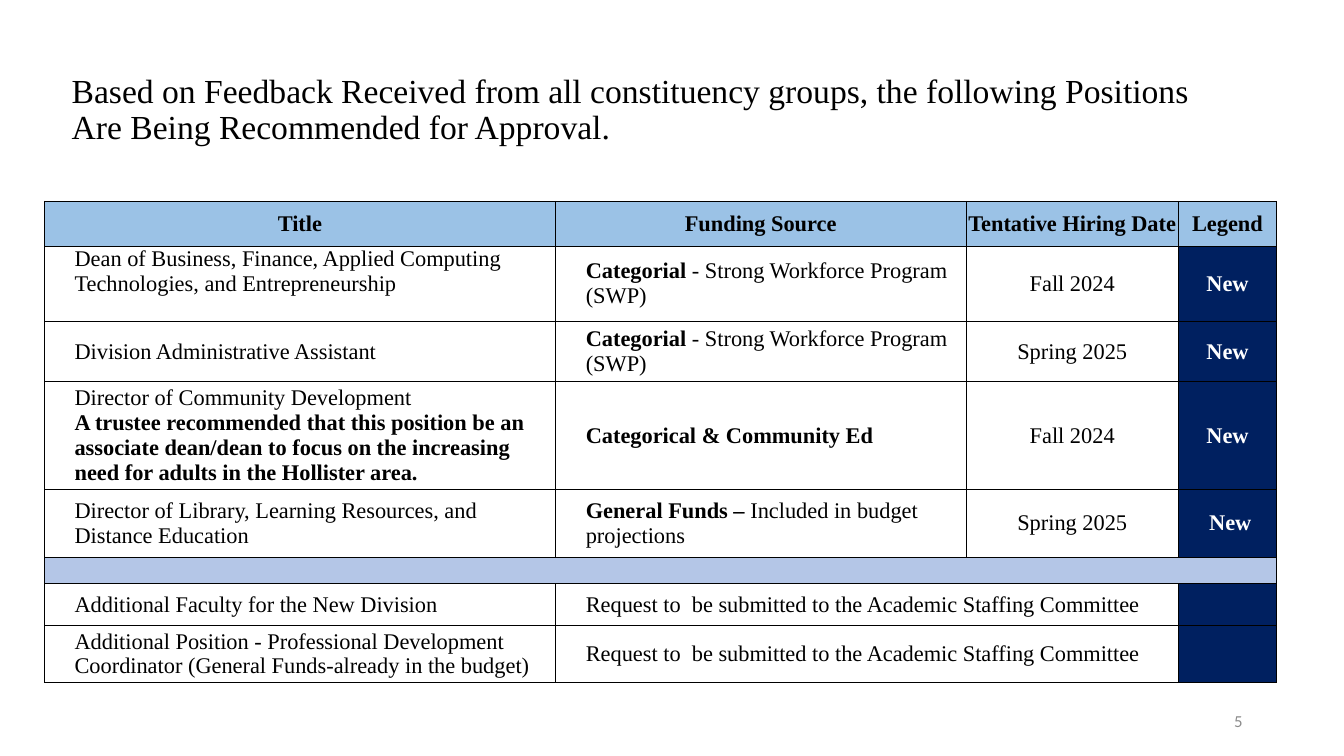
from lxml.etree import SubElement as Sub
from pptx import Presentation as Deck
from pptx.dml.color import RGBColor as RGB
from pptx.enum.text import MSO_ANCHOR as Anchor, PP_ALIGN as Align
from pptx.oxml.ns import qn
from pptx.util import Inches, Pt

BLACK = RGB(0, 0, 0)
WHITE = RGB(255, 255, 255)
GREY = RGB(0x8C, 0x8C, 0x8C)
SKY = RGB(0x9B, 0xC2, 0xE6)
PALE = RGB(0xB4, 0xC6, 0xE7)
NAVY = RGB(0x00, 0x20, 0x60)

SERIF = "Times New Roman"
HEAD = {"name": SERIF, "size": Pt(24), "bold": False}
BODY = {"name": SERIF, "size": Pt(16), "bold": False}
FOOT = {"name": "Calibri", "size": Pt(12), "bold": False}
INDENT = Inches(0.3)

COLS = [38.04, 30.53, 15.83, 7.28]
ROWS = [6, 9.9, 8, 13.2, 9, 3.45, 5.6, 7.5]

# A cell is a list of paragraphs, a paragraph a list of (text, bold) runs.
SWP = [[("Categorial", True), (" - Strong Workforce Program (SWP)", False)]]
TITLES = ["Title", "Funding Source", "Tentative Hiring Date", "Legend"]
JOBS = [
    ([[("Dean of Business, Finance, Applied Computing Technologies, "
        "and Entrepreneurship", False)]], SWP, "Fall 2024", "New"),
    ([[("Division Administrative Assistant", False)]],
     SWP, "Spring 2025", "New"),
    ([[("Director of Community Development", False)],
      [("A trustee recommended that this position be an associate dean/dean "
        "to focus on the increasing need for adults in the Hollister area.",
        True)]],
     [[("Categorical & Community Ed", True)]], "Fall 2024", "New"),
    ([[("Director of Library, Learning Resources, and Distance Education",
        False)]],
     [[("General Funds – ", True), ("Included in budget projections", False)]],
     "Spring 2025", " New"),
]
EXTRAS = [
    "Additional Faculty for the New Division",
    "Additional Position - Professional Development Coordinator "
    "(General Funds-already in the budget)",
]
REQUEST = "Request to  be submitted to the Academic Staffing Committee"


class Page:
    """One slide on a grid of 100 columns by 100 rows."""

    def __init__(self, deck):
        self.col = deck.slide_width / 100
        self.row = deck.slide_height / 100
        self.slide = deck.slides.add_slide(deck.slide_layouts[6])

    def box(self, x, y, w, h):
        return (round(x * self.col), round(y * self.row),
                round(w * self.col), round(h * self.row))

    def put(self, frame, paras, style, color=BLACK, align=Align.LEFT, gap=1):
        """Fill a text frame with paragraphs of runs."""
        for i, runs in enumerate(paras):
            para = frame.add_paragraph() if i else frame.paragraphs[0]
            para.alignment, para.line_spacing = align, gap
            for text, bold in runs:
                run = para.add_run()
                run.text = text
                for key, value in {**style, "bold": bold}.items():
                    setattr(run.font, key, value)
                run.font.color.rgb = color

    def text(self, area, text, style, **look):
        frame = self.slide.shapes.add_textbox(*self.box(*area)).text_frame
        frame.word_wrap = True
        frame.vertical_anchor = Anchor.MIDDLE
        self.put(frame, [[(text, False)]], style, **look)

    def table(self, x, y, cols, rows):
        area = self.box(x, y, sum(cols), sum(rows))
        shape = self.slide.shapes.add_table(len(rows), len(cols), *area)
        grid = shape.table
        grid.first_row = grid.horz_banding = False
        for col, w in zip(grid.columns, cols):
            col.width = round(w * self.col)
        for row, h in zip(grid.rows, rows):
            row.height = round(h * self.row)
        for cell in grid.iter_cells():
            self.edge(cell)
            cell.fill.background()
        return grid

    def edge(self, cell):
        """Draw thin black borders on all four sides."""
        props = cell._tc.get_or_add_tcPr()
        for side in ("lnL", "lnR", "lnT", "lnB"):
            line = Sub(props, qn("a:" + side), w=str(Pt(0.5)))
            fill = Sub(line, qn("a:solidFill"))
            Sub(fill, qn("a:srgbClr"), val=str(BLACK))

    def cell(self, cell, paras=(), fill=None, left=0, anchor=Anchor.MIDDLE,
             **look):
        form = {"margin_left": left, "margin_right": 0, "margin_top": 0,
                "margin_bottom": 0, "vertical_anchor": anchor}
        for key, value in form.items():
            setattr(cell, key, value)
        if fill is not None:
            cell.fill.solid()
            cell.fill.fore_color.rgb = fill
        if paras:
            self.put(cell.text_frame, paras, BODY, **look)
        else:
            end = cell.text_frame.paragraphs[0]._p.get_or_add_endParaRPr()
            end.set("sz", "1200")


def main():
    deck = Deck()
    deck.slide_width, deck.slide_height = Inches(13.33), Inches(7.5)
    page = Page(deck)
    page.text((4.6, 4.9, 86.3, 19.4),
              "Based on Feedback Received from all constituency groups, the "
              "following Positions Are Being Recommended for Approval.",
              HEAD, gap=0.9)
    page.text((70.7, 92.7, 22.5, 5.3), "5", FOOT, color=GREY,
              align=Align.RIGHT)

    grid = page.table(3.3, 26.6, COLS, ROWS)
    for c, title in enumerate(TITLES):
        page.cell(grid.cell(0, c), [[(title, True)]], SKY, align=Align.CENTER)

    for r, (job, fund, date, mark) in enumerate(JOBS, 1):
        anchor = Anchor.TOP if r == 1 else Anchor.MIDDLE
        page.cell(grid.cell(r, 0), job, left=INDENT, anchor=anchor)
        page.cell(grid.cell(r, 1), fund, left=INDENT)
        page.cell(grid.cell(r, 2), [[(date, False)]], align=Align.CENTER)
        page.cell(grid.cell(r, 3), [[(mark, True)]], NAVY, color=WHITE,
                  align=Align.CENTER)

    band = len(JOBS) + 1
    grid.cell(band, 0).merge(grid.cell(band, 3))
    page.cell(grid.cell(band, 0), fill=PALE)

    for r, extra in enumerate(EXTRAS, band + 1):
        grid.cell(r, 1).merge(grid.cell(r, 2))
        for c, text in enumerate((extra, REQUEST)):
            page.cell(grid.cell(r, c), [[(text, False)]], left=INDENT)
        page.cell(grid.cell(r, 3), fill=NAVY)

    deck.save("out.pptx")


if __name__ == "__main__":
    main()
